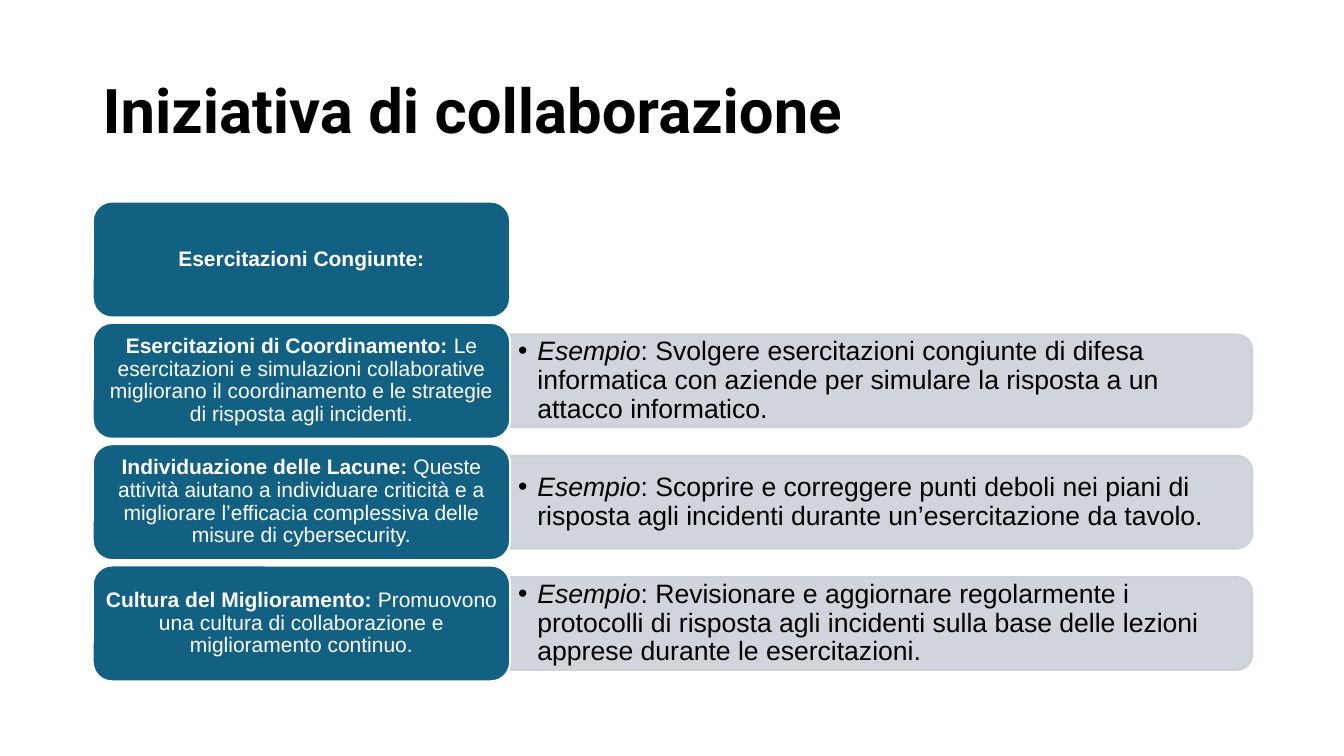
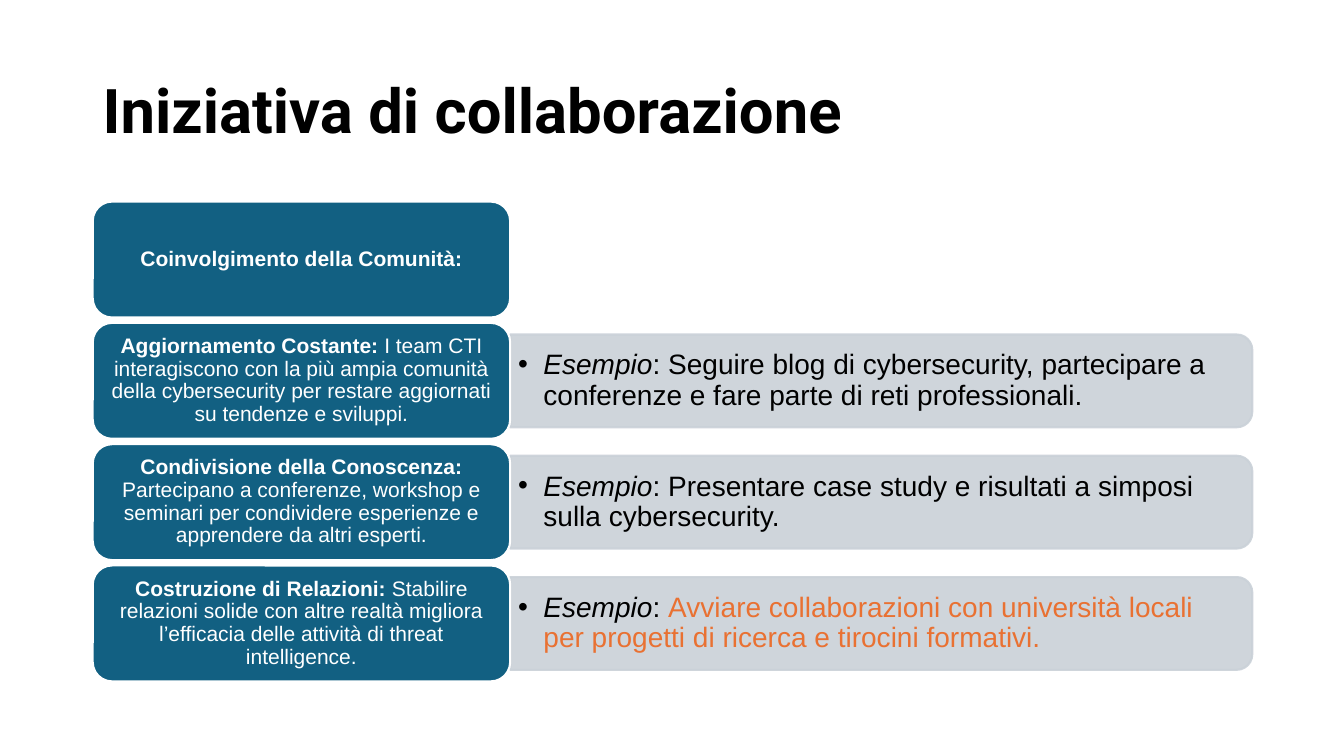
from dataclasses import dataclass

from lxml.etree import SubElement
from pptx import Presentation
from pptx.dml.color import RGBColor
from pptx.enum.shapes import MSO_SHAPE
from pptx.enum.text import MSO_ANCHOR, PP_ALIGN
from pptx.oxml.ns import qn
from pptx.util import Inches, Pt


@dataclass(frozen=True)
class Theme:
    """Colours, fonts and type sizes of the deck."""
    ink: str = "000000"
    paper: str = "FFFFFF"
    teal: str = "126082"
    grey: str = "CAD1D8"
    accent: str = "E97132"
    head: str = "Roboto"
    body: str = "Arial"
    title: int = 44
    label: int = 15
    edge: float = 1.5
    alpha: int = 90


@dataclass(frozen=True)
class Grid:
    """Two columns and four equal rows, in inches."""
    left: float = 0.92
    split: float = 5.06
    right: float = 12.42
    top: float = 2.0
    base: float = 6.76
    rows: int = 4
    tall: float = 1.15
    band: float = 0.92
    text: float = 0.83

    def row(self, index):
        """Return the top of a row."""
        return self.top + index * (self.base - self.top - self.tall) / (self.rows - 1)


THEME = Theme()
GRID = Grid()
WIDE, HIGH = 13.33, 7.5
TITLE = "Iniziativa di collaborazione"
LEAD = "Esempio"

DECK = [
    {
        "topic": "Esercitazioni Congiunte:", "size": 19, "indent": 0.19,
        "rows": [
            ("Esercitazioni di Coordinamento: ",
             "Le esercitazioni e simulazioni collaborative migliorano il coordinamento "
             "e le strategie di risposta agli incidenti.",
             "Svolgere esercitazioni congiunte di difesa informatica con aziende per "
             "simulare la risposta a un attacco informatico.", THEME.ink),
            ("Individuazione delle Lacune: ",
             "Queste attività aiutano a individuare criticità e a migliorare "
             "l’efficacia complessiva delle misure di cybersecurity.",
             "Scoprire e correggere punti deboli nei piani di risposta agli incidenti "
             "durante un’esercitazione da tavolo.", THEME.ink),
            ("Cultura del Miglioramento: ",
             "Promuovono una cultura di collaborazione e miglioramento continuo.",
             "Revisionare e aggiornare regolarmente i protocolli di risposta agli "
             "incidenti sulla base delle lezioni apprese durante le esercitazioni.",
             THEME.ink),
        ],
    },
    {
        "topic": "Coinvolgimento della Comunità:", "size": 20, "indent": 0.25,
        "rows": [
            ("Aggiornamento Costante: ",
             "I team CTI interagiscono con la più ampia comunità della cybersecurity "
             "per restare aggiornati su tendenze e sviluppi.",
             "Seguire blog di cybersecurity, partecipare a conferenze e fare parte di "
             "reti professionali.", THEME.ink),
            ("Condivisione della Conoscenza: ",
             "Partecipano a conferenze, workshop e seminari per condividere esperienze "
             "e apprendere da altri esperti.",
             "Presentare case study e risultati a simposi sulla cybersecurity.",
             THEME.ink),
            ("Costruzione di Relazioni: ",
             "Stabilire relazioni solide con altre realtà migliora l’efficacia delle "
             "attività di threat intelligence.",
             "Avviare collaborazioni con università locali per progetti di ricerca e "
             "tirocini formativi.", THEME.accent),
        ],
    },
]


def apply(target, values):
    """Set each attribute of the target from a dict."""
    for name, value in values.items():
        setattr(target, name, value)


def fade(fill):
    """Make a solid fill partly clear."""
    color = fill._xPr.find(qn("a:solidFill"))[0]
    SubElement(color, qn("a:alpha"), val=str(THEME.alpha * 1000))


def paint(shape, fill, line):
    """Give a shape its fill and outline without a shadow."""
    shape.shadow.inherit = False
    shape.line.width = Pt(THEME.edge)
    for part, color in ((shape.fill, fill), (shape.line.fill, line)):
        part.solid()
        part.fore_color.rgb = RGBColor.from_string(color)


def bullet(para, indent):
    """Add a hanging bullet to a paragraph."""
    props = para._p.get_or_add_pPr()
    apply_xml = {"marL": Inches(indent), "indent": -Inches(indent)}
    for name, value in apply_xml.items():
        props.set(name, str(int(value)))
    color = SubElement(props, qn("a:buClr"))
    SubElement(color, qn("a:srgbClr"), val=THEME.ink)
    SubElement(props, qn("a:buFont"), typeface=THEME.body)
    SubElement(props, qn("a:buChar"), char="•")


def write(shape, runs, pad, font, size, align=PP_ALIGN.LEFT, indent=0):
    """Fill a frame with one paragraph of styled runs."""
    frame = shape.text_frame
    side, edge = Inches(pad), Inches(pad / 2)
    apply(frame, {
        "word_wrap": True, "vertical_anchor": MSO_ANCHOR.MIDDLE,
        "margin_left": side, "margin_right": side,
        "margin_top": edge, "margin_bottom": edge,
    })
    para = frame.paragraphs[0]
    apply(para, {"alignment": align, "line_spacing": 0.9})
    if indent:
        bullet(para, indent)
    for text, color, style in runs:
        run = para.add_run()
        run.text = text
        apply(run.font, {"name": font, "size": Pt(size), **style})
        run.font.color.rgb = RGBColor.from_string(color)


def add_title(slide):
    """Add the slide title."""
    box = slide.shapes.add_textbox(
        Inches(GRID.left), Inches(0.4), Inches(11.5), Inches(1.45))
    write(box, [(TITLE, THEME.ink, {"bold": True})], 0.1, THEME.head, THEME.title)


def add_label(slide, index, name, detail=""):
    """Add a teal label in the left column."""
    card = slide.shapes.add_shape(
        MSO_SHAPE.ROUNDED_RECTANGLE, Inches(GRID.left), Inches(GRID.row(index)),
        Inches(GRID.split - GRID.left), Inches(GRID.tall))
    paint(card, THEME.teal, THEME.paper)
    runs = [(name, THEME.paper, {"bold": True})]
    if detail:
        runs.append((detail, THEME.paper, {"bold": False}))
    write(card, runs, 0.06, THEME.body, THEME.label, PP_ALIGN.CENTER)


def add_band(slide, index, text, color, size, indent):
    """Add a grey band with its example in the right column."""
    wide = GRID.right - GRID.split
    mid_x = GRID.split + wide / 2
    mid_y = GRID.row(index) + GRID.tall / 2
    band = slide.shapes.add_shape(
        MSO_SHAPE.ROUND_2_SAME_RECTANGLE, Inches(mid_x - GRID.band / 2),
        Inches(mid_y - wide / 2), Inches(GRID.band), Inches(wide))
    band.rotation = 90
    paint(band, THEME.grey, THEME.grey)
    for fill in (band.fill, band.line.fill):
        fade(fill)
    box = slide.shapes.add_textbox(
        Inches(GRID.split), Inches(mid_y - GRID.text / 2),
        Inches(wide - 0.04), Inches(GRID.text))
    runs = [(LEAD, THEME.ink, {"italic": True}), (": ", THEME.ink, {}), (text, color, {})]
    write(box, runs, 0.08, THEME.body, size, indent=indent)


def add_page(deck, page):
    """Add one slide with its topic and rows."""
    slide = deck.slides.add_slide(deck.slide_layouts[6])
    add_title(slide)
    add_label(slide, 0, page["topic"])
    for index, (name, detail, text, color) in enumerate(page["rows"], 1):
        add_band(slide, index, text, color, page["size"], page["indent"])
        add_label(slide, index, name, detail)


def main():
    """Build and save the deck."""
    deck = Presentation()
    apply(deck, {"slide_width": Inches(WIDE), "slide_height": Inches(HIGH)})
    for page in DECK:
        add_page(deck, page)
    deck.save("out.pptx")


if __name__ == "__main__":
    main()
